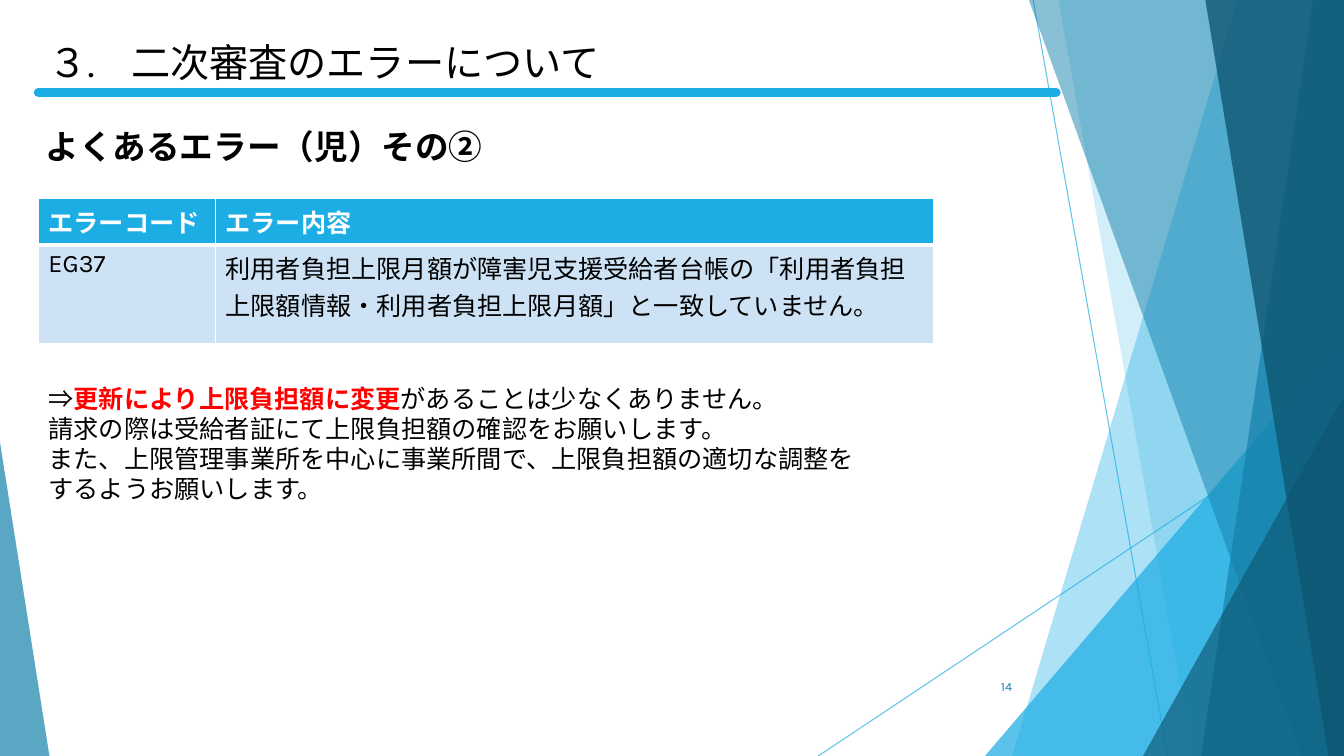
import pptx
import pptx.dml.color
import pptx.enum.shapes
import pptx.enum.text
import pptx.oxml
import pptx.oxml.ns
import pptx.util

Pt = pptx.util.Pt
qn = pptx.oxml.ns.qn
MSO_SHAPE = pptx.enum.shapes.MSO_SHAPE
ANCHOR = pptx.enum.text.MSO_ANCHOR
ALIGN = pptx.enum.text.PP_ALIGN

WIDTH, HEIGHT = 960, 540
COLORS = {
    "accent": "1CADE4", "deep": "1482AC", "navy": "0E5772", "row": "CDE3F5",
    "black": "000000", "white": "FFFFFF", "red": "FF0000",
}


def rgb(name):
    return pptx.dml.color.RGBColor.from_string(COLORS[name])


def add_element(parent, tag, **attributes):
    element = pptx.oxml.parse_xml(f"<a:{tag} {pptx.oxml.ns.nsdecls('a')}/>")
    for name, value in attributes.items():
        element.set(name, str(value))
    parent.append(element)
    return element


def set_alpha(shape, percent):
    color = shape._element.spPr.find(".//" + qn("a:srgbClr"))
    add_element(color, "alpha", val=percent * 1000)


def paint(shape, color, alpha):
    shape.shadow.inherit = False
    shape.fill.solid()
    shape.fill.fore_color.rgb = rgb(color)
    shape.line.fill.background()
    set_alpha(shape, alpha)


def add_line(slide, start, end, color, width):
    line = slide.shapes.add_connector(
        pptx.enum.shapes.MSO_CONNECTOR.STRAIGHT, *map(Pt, start + end))
    line.line.color.rgb = rgb(color)
    line.line.width = Pt(width)
    add_element(line._element.spPr, "effectLst")
    return line


def add_run(paragraph, text, size, font="Karla", color="black", bold=False, east_asian=True):
    """Add a run; east_asian applies the same font to Japanese characters."""
    run = paragraph.add_run()
    run.text = text
    formats = {"size": Pt(size), "name": font, "bold": bold}
    for name, value in formats.items():
        setattr(run.font, name, value)
    run.font.color.rgb = rgb(color)
    if east_asian:
        add_element(run._r.get_or_add_rPr(), "ea", typeface=font)


def set_box(shape, left, top, width, height, anchor=ANCHOR.TOP):
    places = {"left": left, "top": top, "width": width, "height": height}
    for name, value in places.items():
        setattr(shape, name, Pt(value))
    frame = shape.text_frame
    formats = {"word_wrap": True, "vertical_anchor": anchor,
               "auto_size": pptx.enum.text.MSO_AUTO_SIZE.NONE}
    for name, value in formats.items():
        setattr(frame, name, value)
    return frame


def add_text(slide, left, top, width, height, anchor=ANCHOR.TOP):
    shape = slide.shapes.add_textbox(0, 0, 0, 0)
    return set_box(shape, left, top, width, height, anchor).paragraphs[0]


def draw_facets(slide, right, bottom):
    """Draw the translucent facets along the right edge and the left corner."""
    for start, end in (((738, 0), (834, bottom)), ((right, 290), (584.5, bottom))):
        set_alpha(add_line(slide, start, end, "accent", 0.75), 70)

    def band(top_left, bottom_left, color, alpha):
        builder = slide.shapes.build_freeform(top_left, 0, scale=Pt(1))
        builder.add_line_segments(
            [(right, 0), (right, bottom), (bottom_left, bottom)], close=True)
        paint(builder.convert_to_shape(), color, alpha)

    def corner(left, top, width, apex, color, alpha):
        shape = slide.shapes.add_shape(
            MSO_SHAPE.ISOSCELES_TRIANGLE, *map(Pt, (left, top, width, bottom - top)))
        shape.adjustments[0] = apex
        paint(shape, color, alpha)

    band(884, 723, "accent", 36)
    band(756, 852, "accent", 20)
    corner(703.5, 240, right - 703.5, 1, "accent", 72)
    band(735, 929.5, "deep", 50)
    band(938, 858, "deep", 70)
    band(861, 949, "navy", 80)
    corner(816.5, 283, right - 816.5, 1, "navy", 66)
    corner(0, 316, 35.3, 0, "deep", 70)


def draw_heading(slide, left, top, width, height):
    frame = set_box(slide.shapes.title, left, top, width, height)
    paragraph = frame.paragraphs[0]
    paragraph.alignment = ALIGN.LEFT
    stops = add_element(paragraph._p.get_or_add_pPr(), "tabLst")
    add_element(stops, "tab", pos=Pt(59), algn="l")
    add_run(paragraph, "３.\t二次審査のエラーについて", 28)
    rule_y = top + height + 1.5
    rule = add_line(slide, (left, rule_y), (left + 727, rule_y), "accent", 6.5)
    rule.line._get_or_add_ln().set("cap", "rnd")


def draw_border(cell, tag, width):
    border = add_element(cell._tc.get_or_add_tcPr(), tag, w=Pt(width))
    add_element(add_element(border, "solidFill"), "srgbClr", val=COLORS["white"])


def draw_errors(slide, left, top, column_widths, row_heights):
    rows = (
        ("エラーコード", "エラー内容"),
        ("EG37", "利用者負担上限月額が障害児支援受給者台帳の「利用者負担上限額情報・利用者負担上限月額」"
                 "と一致していません。"),
    )
    table = slide.shapes.add_table(
        len(rows), len(column_widths), Pt(left), Pt(top),
        Pt(sum(column_widths)), Pt(sum(row_heights))).table
    for column, width in zip(table.columns, column_widths):
        column.width = Pt(width)
    for row_index, texts in enumerate(rows):
        header = row_index == 0
        table.rows[row_index].height = Pt(row_heights[row_index])
        for column_index, text in enumerate(texts):
            cell = table.cell(row_index, column_index)
            for tag in ("lnL", "lnR", "lnT", "lnB"):
                middle = tag == ("lnB" if header else "lnT")
                draw_border(cell, tag, 3 if middle else 1)
            cell.fill.solid()
            cell.fill.fore_color.rgb = rgb("accent" if header else "row")
            body = not header and column_index == 1
            add_run(cell.text_frame.paragraphs[0], text, 18, "Arial" if body else "Karla",
                    "white" if header else "black", header, east_asian=False)


def draw_advice(slide, left, top, width, height):
    lines = (
        (("⇒", False), ("更新により上限負担額に変更", True), ("があることは少なくありません。", False)),
        (("請求の際は受給者証にて上限負担額の確認をお願いします。", False),),
        (("また、上限管理事業所を中心に事業所間で、上限負担額の適切な調整を", False),),
        (("するようお願いします。", False),),
    )
    frame = set_box(slide.placeholders[1], left, top, width, height)
    for index, runs in enumerate(lines):
        paragraph = frame.add_paragraph() if index else frame.paragraphs[0]
        paragraph.space_before = Pt(0)
        properties = paragraph._p.get_or_add_pPr()
        properties.set("marL", "0")
        properties.set("indent", "0")
        add_element(properties, "buNone")
        for text, strong in runs:
            add_run(paragraph, text, 18, "Arial", "red" if strong else "black", strong)


def build_error_slide(presentation):
    slide = presentation.slides.add_slide(presentation.slide_layouts[1])
    draw_facets(slide, WIDTH, HEIGHT)
    draw_heading(slide, 27.4, 23.5, 677.5, 41)
    subheading = add_text(slide, 25.5, 86.5, 742, 36)
    add_run(subheading, "よくあるエラー（児）その②", 24, bold=True)
    draw_errors(slide, 27.4, 141.5, (126.5, 513), (29.5, 71))
    draw_advice(slide, 27.4, 270, 703.5, 94.5)
    number = add_text(slide, 676, 476, 54, 29, ANCHOR.MIDDLE)
    number.alignment = ALIGN.RIGHT
    add_run(number, "14", 9, color="deep")


def main():
    presentation = pptx.Presentation()
    presentation.slide_width, presentation.slide_height = Pt(WIDTH), Pt(HEIGHT)
    build_error_slide(presentation)
    presentation.save("out.pptx")


if __name__ == "__main__":
    main()
